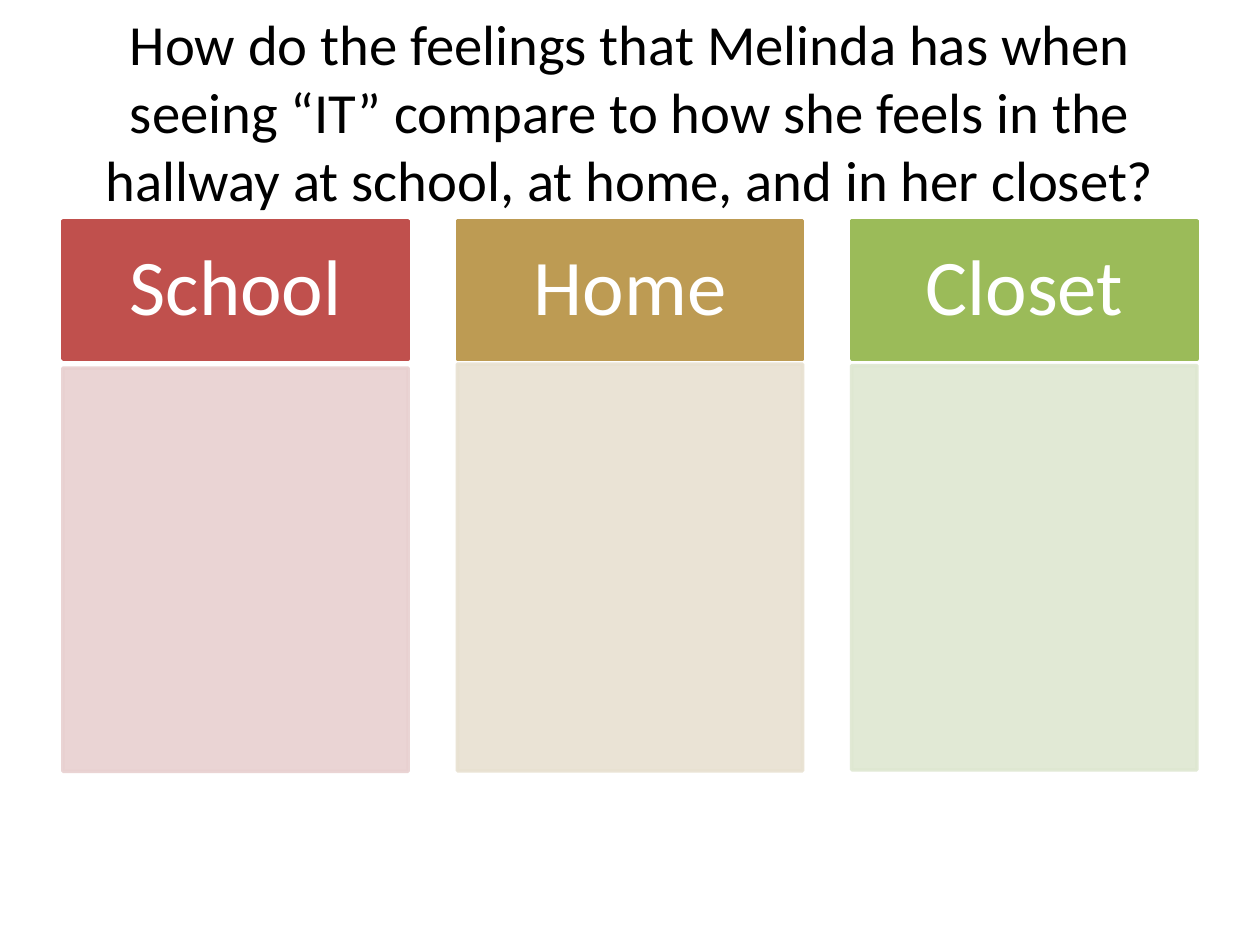
from lxml import etree
from pptx import Presentation
from pptx.dml.color import RGBColor
from pptx.enum import shapes, text
from pptx.oxml.ns import qn
from pptx.util import Cm, Pt

TITLE = ("How do the feelings that Melinda has when seeing “IT” compare to "
         "how she feels in the hallway at school, at home, and in her closet?")
PLACES = [
    ("School", 7.42, 8.13),
    ("Home", 7.34, 8.2),
    ("Closet", 7.37, 8.15),
]
COLORS = {
    "School": ("C0504D", "E8D0D0"),
    "Home": ("BD9B53", "E8E1D1"),
    "Closet": ("9BBB59", "DEE7D1"),
    "title": "000000",
    "label": "FFFFFF",
}
LEFT, WIDTH, STEP = 1.27, 6.96, 7.95
TOP, HEIGHT = 4.45, 2.79


def style(frame, size, color):
    frame.word_wrap = True
    frame.vertical_anchor = text.MSO_ANCHOR.MIDDLE
    para = frame.paragraphs[0]
    para.alignment = text.PP_ALIGN.CENTER
    font = para.runs[0].font
    font.name, font.size = "Calibri", Pt(size)
    font.color.rgb = RGBColor.from_string(color)


def add_box(slide, left, top, height, color):
    box = slide.shapes.add_shape(
        shapes.MSO_SHAPE.RECTANGLE, Cm(left), Cm(top), Cm(WIDTH), Cm(height))
    box.shadow.inherit = False
    box.fill.solid()
    box.line.width = Pt(2)
    for paint in (box.fill.fore_color, box.line.color):
        paint.rgb = RGBColor.from_string(color)
    return box


def fade(box, percent):
    for tone in box._element.spPr.iter(qn("a:srgbClr")):
        etree.SubElement(tone, qn("a:alpha")).set("val", str(percent * 1000))


def main():
    deck = Presentation()
    deck.slide_width, deck.slide_height = Cm(25.4), Cm(19.05)
    slide = deck.slides.add_slide(deck.slide_layouts[5])

    title = slide.shapes.title
    title.left, title.top = Cm(LEFT), Cm(0.07)
    title.width, title.height = Cm(22.86), Cm(4.32)
    title.text_frame.text = TITLE
    style(title.text_frame, 32.4, COLORS["title"])

    for i, (name, top, height) in enumerate(PLACES):
        left = LEFT + i * STEP
        dark, light = COLORS[name]
        head = add_box(slide, left, TOP, HEIGHT, dark)
        frame = head.text_frame
        frame.text = name
        frame.margin_left = frame.margin_right = Cm(0.89)
        frame.margin_top = frame.margin_bottom = Cm(0.51)
        style(frame, 45, COLORS["label"])
        frame.paragraphs[0].line_spacing = 0.9
        fade(add_box(slide, left, top, height, light), 90)

    deck.save("out.pptx")


if __name__ == "__main__":
    main()
